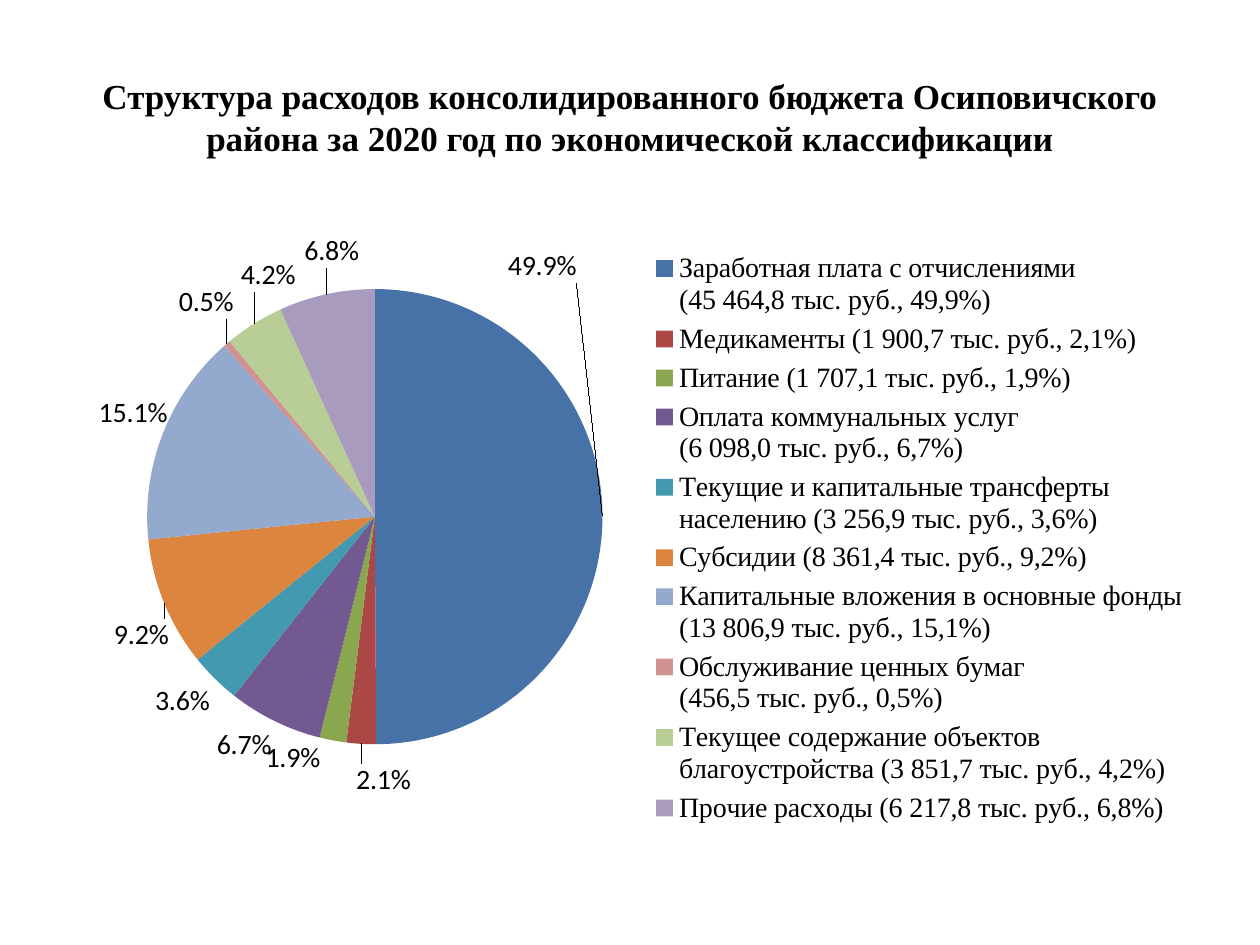
from lxml import etree
from pptx import Presentation
from pptx.chart.data import CategoryChartData
from pptx.dml.color import RGBColor
from pptx.enum import chart as charts, text
from pptx.oxml import ns
from pptx.util import Inches, Pt

SERIF, SANS = "Times New Roman", "Calibri"
COLOURS = {
    "text": "000000", "wages": "4672A8", "medicine": "AB4744", "food": "8AA64F",
    "utilities": "725990", "transfers": "4299B0", "subsidies": "DC853E",
    "capital": "93A9CE", "securities": "D09392", "upkeep": "B9CD96",
    "other": "A99BBD",
}
TITLE = ("Структура расходов консолидированного бюджета Осиповичского "
         "района за 2020 год по экономической классификации")
# Colour name, legend text, share, label shift as a fraction of the chart
EXPENSES = [
    ("wages", "Заработная плата с отчислениями\n(45 464,8 тыс. руб., 49,9%)",
     0.499, (-0.09, -0.4)),
    ("medicine", "Медикаменты (1 900,7 тыс. руб., 2,1%)", 0.021, (0.02, 0.02)),
    ("food", "Питание (1 707,1 тыс. руб., 1,9%)", 0.019, (-0.01, -0.01)),
    ("utilities", "Оплата коммунальных услуг\n(6 098,0 тыс. руб., 6,7%)",
     0.067, None),
    ("transfers", "Текущие и капитальные трансферты населению "
     "(3 256,9 тыс. руб., 3,6%)", 0.036, None),
    ("subsidies", "Субсидии (8 361,4 тыс. руб., 9,2%)", 0.092, (0.01, 0.02)),
    ("capital", "Капитальные вложения в основные фонды "
     "(13 806,9 тыс. руб., 15,1%)", 0.151, (0.01, 0)),
    ("securities", "Обслуживание ценных бумаг\n(456,5 тыс. руб., 0,5%)",
     0.005, (0.01, -0.03)),
    ("upkeep", "Текущее содержание объектов благоустройства "
     "(3 851,7 тыс. руб., 4,2%)", 0.042, (0.04, -0.04)),
    ("other", "Прочие расходы (6 217,8 тыс. руб., 6,8%)", 0.068, (0.03, -0.03)),
]


def style_font(font, name, size, bold=False):
    font.name, font.size, font.bold = name, Pt(size), bold
    font.color.rgb = RGBColor.from_string(COLOURS["text"])


def set_layout(parent, after, **settings):
    """Give a chart element a manual layout, placed after the named child."""
    for old in parent.findall(ns.qn("c:layout")):
        parent.remove(old)
    layout = etree.Element(ns.qn("c:layout"))
    manual = etree.SubElement(layout, ns.qn("c:manualLayout"))
    for tag, value in settings.items():
        etree.SubElement(manual, ns.qn(f"c:{tag}")).set("val", str(value))
    if after:
        parent.find(ns.qn(f"c:{after}")).addnext(layout)
    else:
        parent.insert(0, layout)


def add_title(slide):
    title = slide.shapes.title
    title.left, title.top = Inches(0.5), Inches(0.3)
    title.width, title.height = Inches(9), Inches(1.25)
    title.text_frame.text = TITLE
    title.text_frame.vertical_anchor = text.MSO_ANCHOR.MIDDLE
    para = title.text_frame.paragraphs[0]
    para.alignment = text.PP_ALIGN.CENTER
    style_font(para.font, SERIF, 20, bold=True)


def style_labels(labels):
    labels.show_value = True
    labels.show_percentage = False
    labels.number_format = "0.0%"
    labels.number_format_is_linked = False
    labels.position = charts.XL_LABEL_POSITION.OUTSIDE_END
    style_font(labels.font, SANS, 16)


def style_slices(series):
    for index, (colour, _, _, shift) in enumerate(EXPENSES):
        point = series.points[index]
        point.format.fill.solid()
        point.format.fill.fore_color.rgb = RGBColor.from_string(COLOURS[colour])
        if shift:
            label = point.data_label
            label.position = charts.XL_LABEL_POSITION.OUTSIDE_END
            style_font(label.font, SANS, 16)
            element = series.data_labels._element.xpath(
                f"c:dLbl[c:idx/@val='{index}']")[0]
            set_layout(element, "idx", x=shift[0], y=shift[1])


def add_expense_pie(slide):
    data = CategoryChartData(number_format="0.0%")
    data.categories = [expense[1] for expense in EXPENSES]
    data.add_series("Series 1", [expense[2] for expense in EXPENSES])
    chart = slide.shapes.add_chart(
        charts.XL_CHART_TYPE.PIE, Inches(0.5), Inches(1.75),
        Inches(9), Inches(4.95), data).chart
    chart.has_title = False
    style_font(chart.font, SANS, 18)
    plot = chart.plots[0]
    plot.vary_by_categories = True
    style_labels(plot.series[0].data_labels)
    style_slices(plot.series[0])

    chart.has_legend = True
    legend = chart.legend
    legend.position = charts.XL_LEGEND_POSITION.RIGHT
    legend.include_in_layout = False
    style_font(legend.font, SERIF, 16)
    set_layout(legend._element, "legendPos", xMode="edge", yMode="edge",
               x=0.51, y=0.04, w=0.49, h=0.94)
    plot_area = chart._chartSpace.find(".//" + ns.qn("c:plotArea"))
    set_layout(plot_area, None, layoutTarget="inner", xMode="edge",
               yMode="edge", x=0.04, y=0.11, w=0.47, h=0.73)


def main():
    deck = Presentation()
    deck.slide_width, deck.slide_height = Inches(10), Inches(7.5)
    slide = deck.slides.add_slide(deck.slide_layouts.get_by_name("Title Only"))
    add_title(slide)
    add_expense_pie(slide)
    deck.save("out.pptx")


if __name__ == "__main__":
    main()
